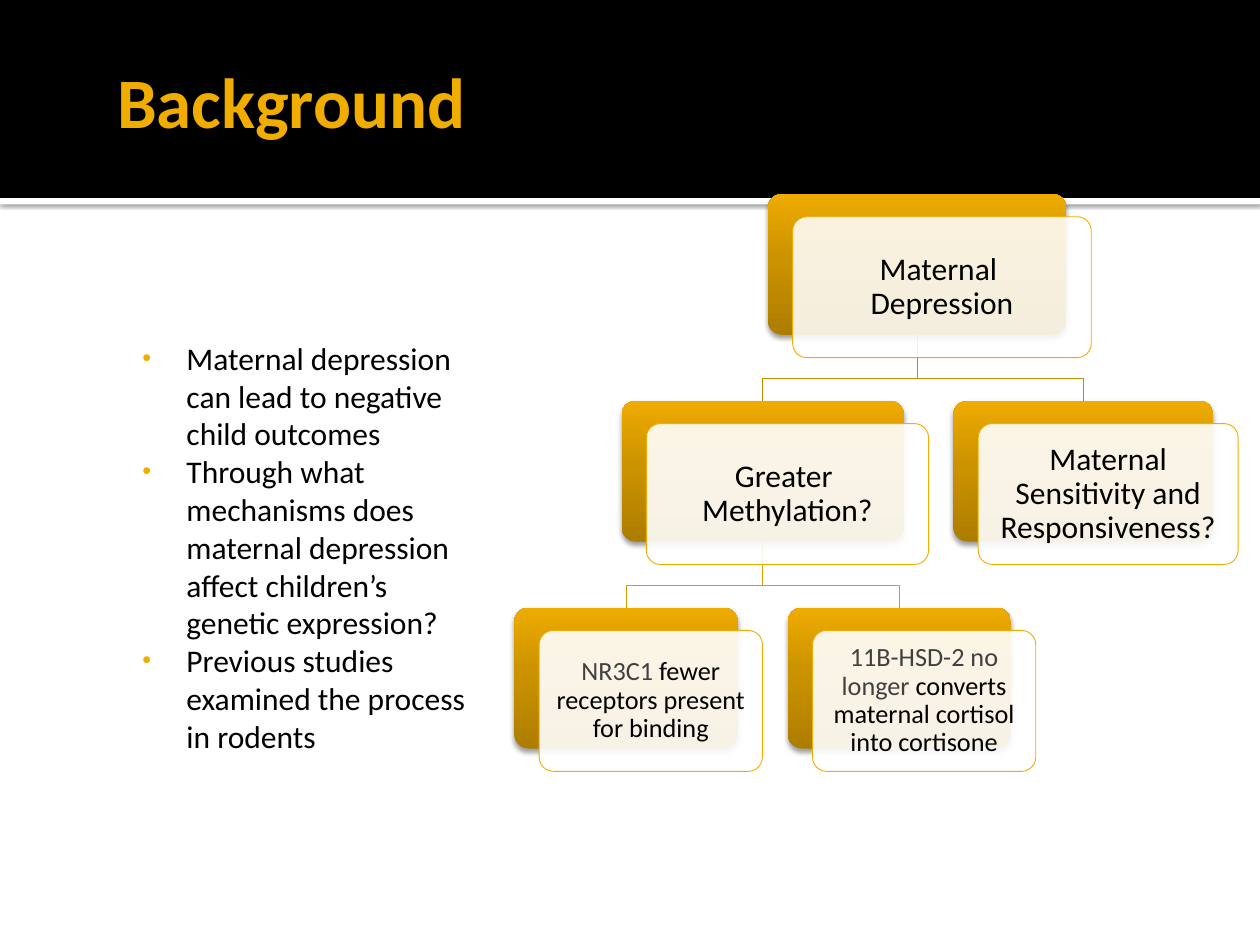
"""Build the Background slide with its bullets and tree of causes."""
from copy import deepcopy
from dataclasses import dataclass

from lxml.etree import SubElement as Sub
from pptx import Presentation
from pptx.dml.color import RGBColor as Rgb
from pptx.enum.shapes import MSO_SHAPE as Kind
from pptx.enum.text import MSO_ANCHOR as Anchor, PP_ALIGN as Align
from pptx.oxml.ns import qn
from pptx.util import Cm, Pt


@dataclass(frozen=True)
class Theme:
    font: str = "Calibri"
    gold: str = "F0AD00"
    black: str = "000000"
    white: str = "FFFFFF"
    gray: str = "404040"
    fade: tuple = ((0, "AE7D00"), (0.55, "CC9300"), (1, "EEAB00"))
    lines: tuple = ("C08B00", "DA9D00")
    title: float = 40.5
    body: float = 18
    small: float = 15


@dataclass(frozen=True)
class Node:
    left: float
    width: float
    level: int
    runs: tuple
    size: float = 18
    alpha: int = 90

    @property
    def top(self):
        return 3.91 + 4.17 * self.level

    @property
    def mid(self):
        return self.left + self.width / 2


THEME = Theme()
HIGH = 2.84
SHIFT = (0.5, 0.46)
BULLETS = (
    "Maternal depression can lead to negative child outcomes",
    "Through what mechanisms does maternal depression affect children’s genetic expression?",
    "Previous studies examined the process in rodents",
)


def color(text):
    return Rgb.from_string(text)


def style(para, size, ink=None, bold=False):
    font = para.font
    font.name, font.size, font.bold = THEME.font, Pt(size), bold
    if ink:
        font.color.rgb = color(ink)


def plain(slide, kind, box, fill=None):
    shape = slide.shapes.add_shape(kind, *map(Cm, box))
    shape.shadow.inherit = False
    shape.line.fill.background()
    if fill:
        shape.fill.solid()
        shape.fill.fore_color.rgb = color(fill)
    return shape


def shade(shape, blur, dist, alpha):
    effects = shape._element.spPr.find(qn("a:effectLst"))
    outer = Sub(effects, qn("a:outerShdw"), blurRad=str(Pt(blur)),
                dist=str(Pt(dist)), dir="5400000", rotWithShape="0")
    tint = Sub(outer, qn("a:srgbClr"), val=THEME.black)
    Sub(tint, qn("a:alpha"), val=str(alpha * 1000))


def blend(shape):
    fill = shape.fill
    fill.gradient()
    stops = shape._element.spPr.find(".//" + qn("a:gsLst"))
    stops.insert(1, deepcopy(stops[0]))
    for stop, (place, tone) in zip(fill.gradient_stops, THEME.fade):
        stop.position = place
        stop.color.rgb = color(tone)
    fill.gradient_angle = 90


def text_box(slide, box, pads):
    frame = slide.shapes.add_textbox(*map(Cm, box)).text_frame
    frame.word_wrap = True
    (frame.margin_left, frame.margin_top,
     frame.margin_right, frame.margin_bottom) = map(Cm, pads)
    return frame


def add_title(slide, text):
    frame = text_box(slide, (2.11, 1.02, 9, 2), (0.25, 0.13, 0.13, 0.13))
    frame.vertical_anchor = Anchor.MIDDLE
    para = frame.paragraphs[0]
    para.text = text
    style(para, THEME.title, THEME.gold, True)


def add_list(slide, items):
    frame = text_box(slide, (2.39, 6.58, 7.62, 5.89), (0.15, 0.25, 0.25, 0.13))
    frame.text = "\n".join(items)
    for para in frame.paragraphs:
        props = para._p.get_or_add_pPr()
        props.set("marL", str(Cm(1.22)))
        props.set("indent", str(Cm(-0.89)))
        Sub(Sub(props, qn("a:buClr")), qn("a:srgbClr"), val=THEME.gold)
        Sub(props, qn("a:buSzPct"), val="80000")
        Sub(props, qn("a:buFont"), typeface="Arial")
        Sub(props, qn("a:buChar"), char="•")
        style(para, THEME.body, THEME.black)


def add_link(slide, top, child):
    start, end = top.top + HIGH, child.top
    bend = start + 0.89
    points = [(top.mid, bend), (child.mid, bend), (child.mid, end)]
    build = slide.shapes.build_freeform(Cm(top.mid), Cm(start))
    build.add_line_segments([(Cm(x), Cm(y)) for x, y in points], close=False)
    link = build.convert_to_shape()
    link.shadow.inherit = False
    link.fill.background()
    link.line.color.rgb = color(THEME.lines[top.level])
    link.line.width = Pt(0.5)


def add_node(slide, node):
    right, down = SHIFT
    back = plain(slide, Kind.ROUNDED_RECTANGLE,
                 (node.left, node.top, node.width, HIGH))
    blend(back)
    shade(back, 3.1, 2, 38)
    card = plain(slide, Kind.ROUNDED_RECTANGLE,
                 (node.left + right, node.top + down, node.width, HIGH), THEME.white)
    tint = card._element.spPr.find(qn("a:solidFill"))[0]
    Sub(tint, qn("a:alpha"), val=str(node.alpha * 1000))
    card.line.color.rgb = color(THEME.gold)
    card.line.width = Pt(0.5)
    for shape in (back, card):
        shape.adjustments[0] = 0.1

    frame = card.text_frame
    frame.word_wrap = True
    frame.vertical_anchor = Anchor.MIDDLE
    frame.margin_left = frame.margin_right = Cm(node.size / 100)
    frame.margin_top = frame.margin_bottom = Cm(node.size / 100)
    para = frame.paragraphs[0]
    para.alignment, para.line_spacing = Align.CENTER, 0.9
    style(para, node.size)
    for part, (words, ink) in enumerate(node.runs):
        for row, line in enumerate(words.split("\n")):
            if row:
                para.add_line_break()
            run = para.add_run()
            run.text = line
            run.font.color.rgb = color(ink)


def main():
    deck = Presentation()
    deck.slide_width, deck.slide_height = Cm(25.4), Cm(19.05)
    slide = deck.slides.add_slide(deck.slide_layouts[6])
    strip = plain(slide, Kind.RECTANGLE, (0, 3.99, 25.4, 0.13), THEME.white)
    shade(strip, 2.5, 0.8, 60)
    plain(slide, Kind.RECTANGLE, (0, 0, 25.4, 3.99), THEME.black)
    add_title(slide, "Background")
    add_list(slide, BULLETS)

    ink, gray, small = THEME.black, THEME.gray, THEME.small
    root = Node(15.48, 6.02, 0, (("Maternal \nDepression", ink),), alpha=87)
    gene = Node(12.53, 5.69, 1, (("Greater \nMethylation?", ink),))
    care = Node(19.22, 5.24, 1, (("Maternal Sensitivity and Responsiveness?", ink),))
    bind = Node(10.37, 4.5, 2, (("NR3C1 ", gray),
                                ("fewer receptors present for binding", ink)), small)
    turn = Node(15.88, 4.5, 2, (("11B-HSD-2 no longer ", gray),
                                ("converts maternal cortisol into cortisone", ink)), small)
    for top, child in ((root, care), (gene, turn), (gene, bind), (root, gene)):
        add_link(slide, top, child)
    for node in (root, gene, bind, turn, care):
        add_node(slide, node)
    deck.save("out.pptx")


if __name__ == "__main__":
    main()
